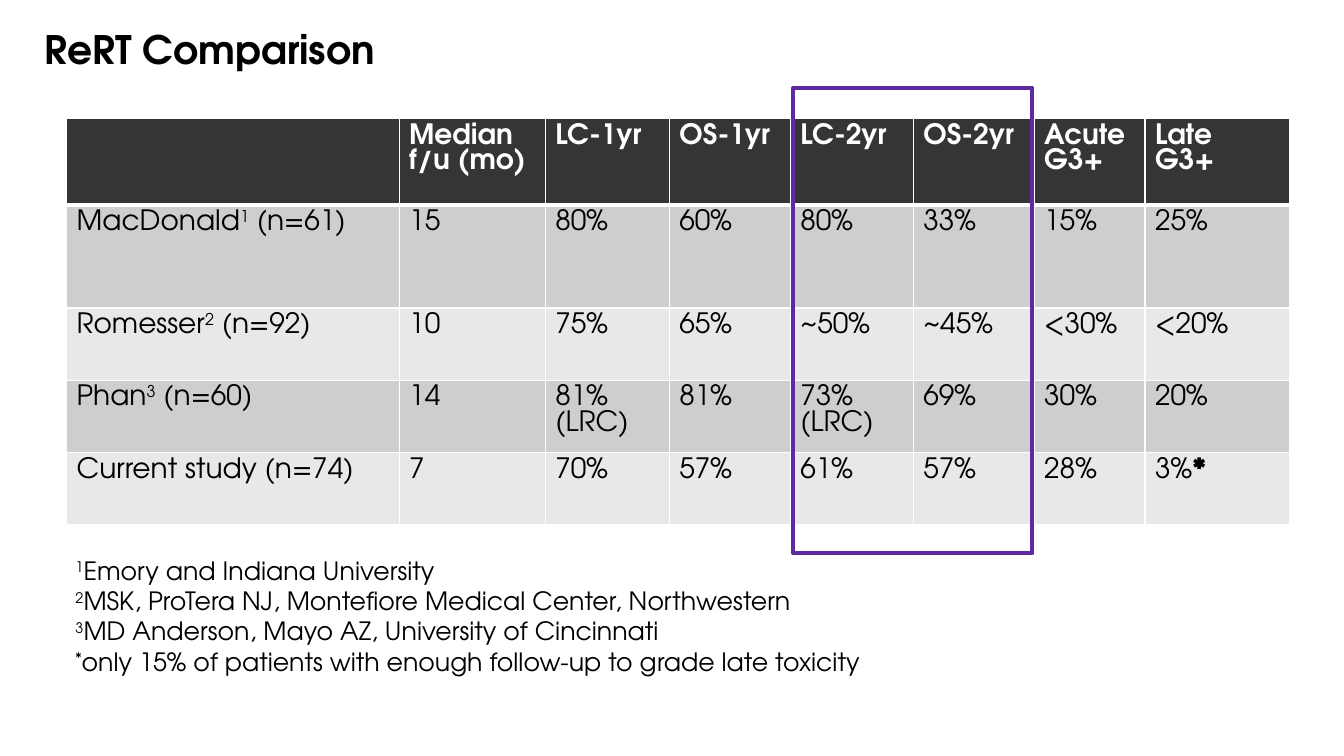
from lxml.etree import SubElement
from pptx import Presentation
from pptx.dml.color import RGBColor
from pptx.enum.shapes import MSO_SHAPE as Shape
from pptx.enum.text import MSO_ANCHOR as Anchor, MSO_AUTO_SIZE as AutoSize, PP_ALIGN as Align
from pptx.oxml.ns import qn
from pptx.util import Pt

FONT = "TeX Gyre Adventor"
BLACK, WHITE, PURPLE = "000000", "FFFFFF", "5E2A9F"
HEADER_FILL, BAND_FILLS = "353535", ("CECECE", "E8E8E8")

TITLE = "ReRT Comparison"
HEADINGS = ["", "Median\nf/u (mo)", "LC-1yr", "OS-1yr", "LC-2yr", "OS-2yr", "Acute G3+", "Late\nG3+"]
STUDIES = [
    ["MacDonald^1^ (n=61)", "15", "80%", "60%", "80%", "33%", "15%", "25%"],
    ["Romesser^2^ (n=92)", "10", "75%", "65%", "~50%", "~45%", "<30%", "<20%"],
    ["Phan^3^ (n=60)", "14", "81% (LRC)", "81%", "73% (LRC)", "69%", "30%", "20%"],
    ["Current study (n=74)", "7", "70%", "57%", "61%", "57%", "28%", "3%"],
]
LATE_MARK = "*"
FOOTNOTES = "\n".join([
    "^1^Emory and Indiana University",
    "^2^MSK, ProTera NJ, Montefiore Medical Center, Northwestern",
    "^3^MD Anderson, Mayo AZ, University of Cincinnati",
    "^*^only 15% of patients with enough follow-up to grade late toxicity",
])
COLUMN_WIDTHS = [237.6, 104.4, 88.6, 86.4, 87.8, 86.4, 79.2, 103]
ROW_HEIGHTS = [61.9, 73.6, 51.6, 51.6, 51.6]


def color(value):
    return RGBColor.from_string(value)


def add_span(para, text, size, ink, bold=False, raised=False):
    span = para.add_run()
    span.text = text
    span.font.name = FONT
    span.font.size = Pt(size)
    span.font.bold = bold
    span.font.color.rgb = color(ink)
    if raised:
        span.font._element.set("baseline", "30000")


def write(frame, text, size, ink=BLACK, bold=False):
    frame.word_wrap = True
    for number, line in enumerate(text.split("\n")):
        para = frame.add_paragraph() if number else frame.paragraphs[0]
        para.alignment = Align.LEFT
        para.line_spacing = 1.0
        para.space_before = Pt(0)
        for part, piece in enumerate(line.split("^")):
            if piece:
                add_span(para, piece, size, ink, bold, raised=part % 2 == 1)


def add_borders(cell, bottom):
    properties = cell._tc.get_or_add_tcPr()
    for side, width in (("L", 1), ("R", 1), ("T", 1), ("B", bottom)):
        line = SubElement(properties, qn(f"a:ln{side}"), w=str(Pt(width)))
        fill = SubElement(line, qn("a:solidFill"))
        SubElement(fill, qn("a:srgbClr"), val=WHITE)


def add_title(page):
    title = page.shapes.title
    title.left, title.top, title.width, title.height = Pt(24.5), Pt(14.4), Pt(702), Pt(58.3)
    frame = title.text_frame
    frame.auto_size = AutoSize.NONE
    frame.vertical_anchor = Anchor.TOP
    write(frame, TITLE, 28, bold=True)


def add_comparison(page):
    rows = [HEADINGS] + STUDIES
    table = page.shapes.add_table(
        len(rows), len(HEADINGS), Pt(47.5), Pt(84.5), Pt(sum(COLUMN_WIDTHS)), Pt(sum(ROW_HEIGHTS))
    ).table
    for column, width in zip(table.columns, COLUMN_WIDTHS):
        column.width = Pt(width)
    for index, (row, height) in enumerate(zip(table.rows, ROW_HEIGHTS)):
        row.height = Pt(height)
        header = index == 0
        for cell, text in zip(row.cells, rows[index]):
            add_borders(cell, 3 if header else 1)
            cell.fill.solid()
            cell.fill.fore_color.rgb = color(HEADER_FILL if header else BAND_FILLS[(index - 1) % 2])
            cell.vertical_anchor = Anchor.TOP
            write(cell.text_frame, text, 20, WHITE if header else BLACK, header)
    last = table.cell(len(rows) - 1, len(HEADINGS) - 1)
    add_span(last.text_frame.paragraphs[0], LATE_MARK, 20, BLACK, bold=True)


def add_footnotes(page):
    box = page.shapes.add_textbox(Pt(46.8), Pt(393), Pt(838.8), Pt(94.3))
    write(box.text_frame, FOOTNOTES, 18)


def add_highlight(page):
    frame = page.shapes.add_shape(Shape.RECTANGLE, Pt(566.6), Pt(62.6), Pt(170.8), Pt(332.6))
    frame.shadow.inherit = False
    frame.fill.background()
    frame.line.color.rgb = color(PURPLE)
    frame.line.width = Pt(3)


def main():
    deck = Presentation()
    deck.slide_width, deck.slide_height = Pt(960), Pt(540)
    page = deck.slides.add_slide(deck.slide_layouts[5])
    add_title(page)
    add_comparison(page)
    add_footnotes(page)
    add_highlight(page)
    deck.save("out.pptx")


if __name__ == "__main__":
    main()
